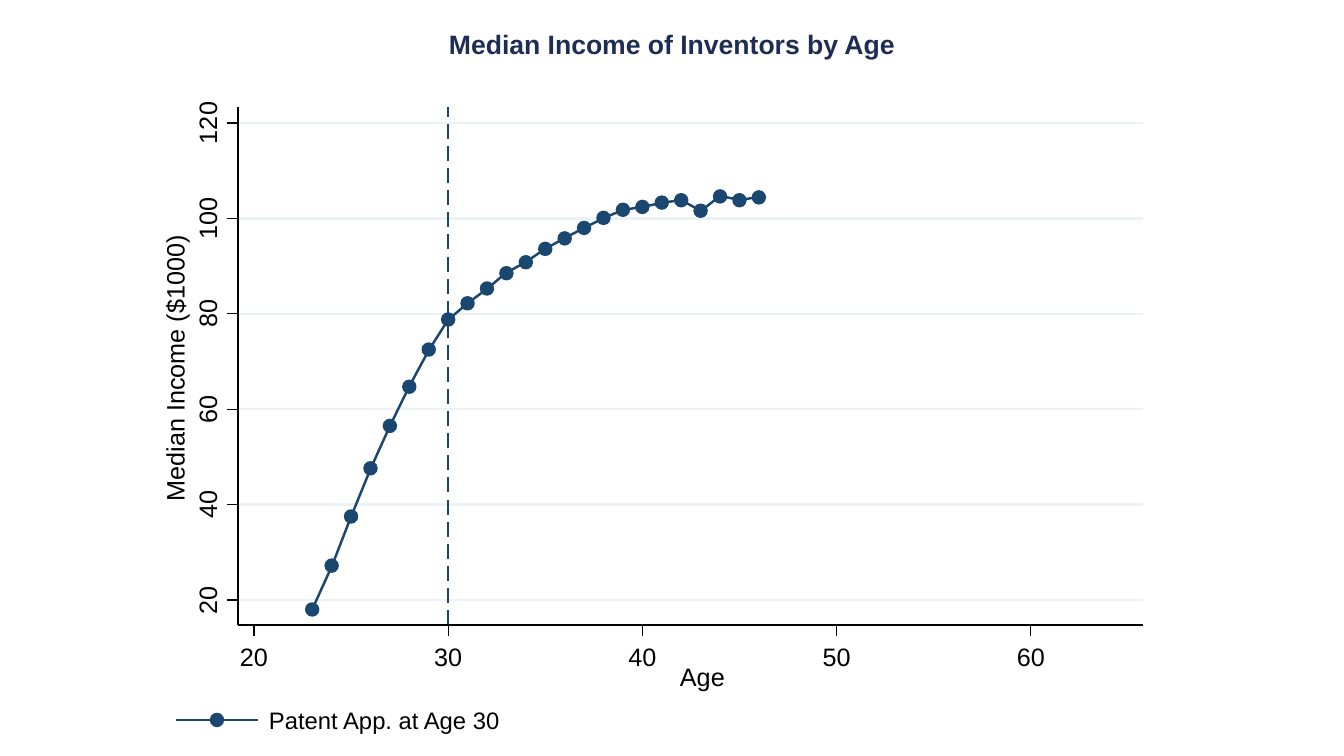
from lxml import etree
from pptx import Presentation
from pptx.dml.color import RGBColor
from pptx.enum.shapes import MSO_CONNECTOR, MSO_SHAPE
from pptx.enum.text import MSO_AUTO_SIZE, PP_ALIGN
from pptx.oxml.ns import qn
from pptx.util import Emu, Pt

PX = 914400 / 100.8
LINE = MSO_CONNECTOR.STRAIGHT
RECT, OVAL = MSO_SHAPE.RECTANGLE, MSO_SHAPE.OVAL
LEFT, CENTER = PP_ALIGN.LEFT, PP_ALIGN.CENTER
NO_FIT = MSO_AUTO_SIZE.NONE
NAVY, BLUE, PALE = "1E2D53", "1A476F", "EAF2F3"
BLACK, WHITE = "000000", "FFFFFF"
THIN, THICK = 0.88, 1.75
WEST, NORTH, EAST, SOUTH = 238, 107, 1143, 625
TICK, DOT, DASH, PITCH = 11, 12, 15, 22.09
FIRST = 23
INCOME = [18, 27.2, 37.5, 47.6, 56.5, 64.7, 72.5, 78.8, 82.2, 85.3, 88.5, 90.8,
          93.6, 95.8, 98, 100.1, 101.8, 102.4, 103.3, 103.8, 101.6, 104.6, 103.8, 104.4]


def px(*vals):
    return [Emu(round(v * PX)) for v in vals]


def color(code):
    return RGBColor.from_string(code)


def apply(obj, form):
    for key, val in form.items():
        setattr(obj, key, val)


def age_x(age):
    return 254 + 19.42 * (age - 20)


def pay_y(pay):
    return 600 - 4.77 * (pay - 20)


def stroke(line, code, width):
    line.width = Pt(width)
    line.color.rgb = color(code)


def add_line(slide, ends, code, width):
    rule = slide.shapes.add_connector(LINE, *px(*ends))
    stroke(rule.line, code, width)
    etree.SubElement(rule._element.spPr, qn("a:effectLst"))


def add_shape(slide, kind, box, code, width):
    shape = slide.shapes.add_shape(kind, *px(*box))
    shape.shadow.inherit = False
    shape.fill.solid()
    shape.fill.fore_color.rgb = color(code)
    stroke(shape.line, code, width)


def add_dot(slide, x, y):
    add_shape(slide, OVAL, (x - DOT / 2, y - DOT / 2, DOT, DOT), BLUE, THICK)


def add_text(slide, box, words, size=18, code=BLACK, align=LEFT, bold=False, turn=0):
    shape = slide.shapes.add_textbox(*px(*box))
    shape.rotation = turn
    frame = shape.text_frame
    apply(frame, {"word_wrap": True, "auto_size": NO_FIT, "margin_left": 0,
                  "margin_right": 0, "margin_top": 0, "margin_bottom": 0})
    para = frame.paragraphs[0]
    para.alignment = align
    run = para.add_run()
    run.text = words
    apply(run.font, {"name": "Arial", "size": Pt(size), "bold": bold})
    run.font.color.rgb = color(code)


def add_grid(slide):
    add_shape(slide, RECT, (WEST, NORTH, EAST - WEST, SOUTH - NORTH), WHITE, THIN)
    for pay in range(20, 121, 20):
        y = pay_y(pay)
        add_line(slide, (WEST, y, EAST, y), PALE, THICK)


def add_mark(slide, age):
    x, y = age_x(age), SOUTH
    while y > NORTH:
        add_line(slide, (x, y, x, max(y - DASH, NORTH)), BLUE, THICK)
        y -= PITCH


def add_curve(slide):
    points = [(age_x(age), pay_y(pay)) for age, pay in enumerate(INCOME, FIRST)]
    path = slide.shapes.build_freeform(*points[0], scale=PX)
    path.add_line_segments(points[1:], close=False)
    curve = path.convert_to_shape()
    curve.shadow.inherit = False
    curve.fill.background()
    stroke(curve.line, BLUE, THICK)
    for x, y in points:
        add_dot(slide, x, y)


def add_scales(slide):
    add_line(slide, (WEST, SOUTH, WEST, NORTH), BLACK, THIN)
    for pay in range(20, 121, 20):
        y, words = pay_y(pay), str(pay)
        wide = 14 * len(words) + 14
        add_line(slide, (WEST, y, WEST - TICK, y), BLACK, THIN)
        add_text(slide, (210 - wide / 2, y - 25, wide, 36), words, turn=270)
    add_text(slide, (32, 338, 291, 36), "Median Income ($1000)", turn=270)
    add_line(slide, (WEST, SOUTH, EAST, SOUTH), BLACK, THIN)
    for age in range(20, 61, 10):
        x = age_x(age)
        add_line(slide, (x, SOUTH, x, SOUTH + TICK), BLACK, THIN)
        add_text(slide, (x - 14, 641, 42, 36), str(age))
    add_text(slide, (680, 661, 60, 36), "Age")


def add_key(slide):
    add_line(slide, (176, 720, 258, 720), BLUE, THICK)
    add_dot(slide, 217, 720)
    add_text(slide, (269, 706, 234, 29), "Patent App. at Age 30", 17)


def main():
    deck = Presentation()
    deck.slide_width, deck.slide_height = px(1344, 756)
    slide = deck.slides.add_slide(deck.slide_layouts[6])
    add_text(slide, (168, 28, 1008, 32), "Median Income of Inventors by Age",
             19, NAVY, CENTER, True)
    add_grid(slide)
    add_mark(slide, 30)
    add_curve(slide)
    add_scales(slide)
    add_key(slide)
    deck.save("out.pptx")


if __name__ == "__main__":
    main()
